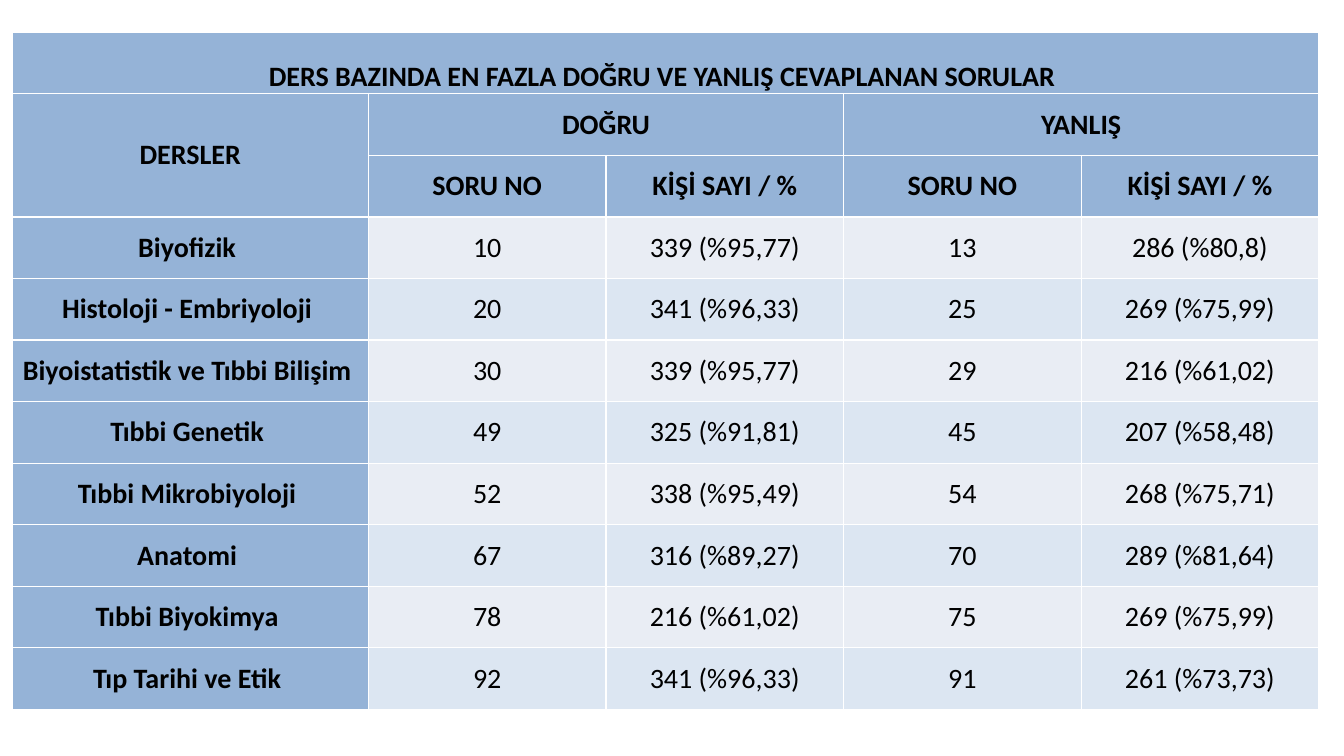
from lxml.etree import SubElement
from pptx import Presentation
from pptx.dml.color import RGBColor
from pptx.enum.text import MSO_ANCHOR, PP_ALIGN
from pptx.oxml.ns import qn
from pptx.util import Inches, Pt

HEADER_FILL = "95B3D7"
BAND_FILLS = ("E9EDF4", "DCE6F2")
HEADER_ROWS = 3
COLUMN_SHARES = (1.5, 1, 1, 1, 1)

ROWS = [
    ("DERS BAZINDA EN FAZLA DOĞRU VE YANLIŞ CEVAPLANAN SORULAR ", "", "", "", ""),
    ("DERSLER", "DOĞRU", "", "YANLIŞ", ""),
    ("", "SORU NO", "KİŞİ SAYI / %", "SORU NO", "KİŞİ SAYI / %"),
    ("Biyofizik ", "10", "339 (%95,77)", "13", "286 (%80,8)"),
    ("Histoloji - Embriyoloji ", "20", "341 (%96,33)", "25", "269 (%75,99)"),
    ("Biyoistatistik ve Tıbbi Bilişim ", "30", "339 (%95,77)", "29", "216 (%61,02)"),
    ("Tıbbi Genetik ", "49", "325 (%91,81)", "45", "207 (%58,48)"),
    ("Tıbbi Mikrobiyoloji ", "52", "338 (%95,49)", "54", "268 (%75,71)"),
    ("Anatomi ", "67", "316 (%89,27)", "70", "289 (%81,64)"),
    ("Tıbbi Biyokimya ", "78", "216 (%61,02)", "75", "269 (%75,99)"),
    ("Tıp Tarihi ve Etik ", "92", "341 (%96,33)", "91", "261 (%73,73)"),
]
# First and last cell of each merged block, as (row, column)
MERGES = [((0, 0), (0, 4)), ((1, 0), (2, 0)), ((1, 1), (1, 2)), ((1, 3), (1, 4))]


def color(hex_string):
    return RGBColor.from_string(hex_string)


class SlideBuilder:
    font = "Calibri"
    text_size = Pt(20)
    text_color = "000000"
    border_color = "FFFFFF"
    border_width = Pt(1)

    def __init__(self, presentation):
        self.slide = presentation.slides.add_slide(presentation.slide_layouts[6])

    def add_table(self, rows, left, top, width, height, shares):
        """Add an unstyled table whose columns split the width by shares."""
        frame = self.slide.shapes.add_table(
            len(rows), len(shares), Inches(left), Inches(top), Inches(width), Inches(height))
        table = frame.table
        table.first_row = table.horz_banding = False
        for column, share in zip(table.columns, shares):
            column.width = Inches(width * share / sum(shares))
        for row in table.rows:
            row.height = Inches(height / len(rows))
        return table

    def add_borders(self, cell):
        properties = cell._tc.get_or_add_tcPr()
        for side in ("a:lnL", "a:lnR", "a:lnT", "a:lnB"):
            line = SubElement(properties, qn(side), w=str(self.border_width))
            fill = SubElement(line, qn("a:solidFill"))
            SubElement(fill, qn("a:srgbClr"), val=self.border_color)

    def fill_cell(self, cell, text, fill, bold, anchor):
        self.add_borders(cell)
        cell.fill.solid()
        cell.fill.fore_color.rgb = color(fill)
        cell.margin_left = cell.margin_right = cell.margin_top = cell.margin_bottom = 0
        cell.vertical_anchor = anchor
        if not text:
            return
        paragraph = cell.text_frame.paragraphs[0]
        paragraph.alignment = PP_ALIGN.CENTER
        run = paragraph.add_run()
        run.text = text
        run.font.name = self.font
        run.font.size = self.text_size
        run.font.bold = bold
        run.font.color.rgb = color(self.text_color)


def main():
    presentation = Presentation()
    presentation.slide_width, presentation.slide_height = Inches(13.33), Inches(7.5)
    builder = SlideBuilder(presentation)
    table = builder.add_table(ROWS, 0.12, 0.32, 12.96, 6.72, COLUMN_SHARES)

    for row_index, row in enumerate(ROWS):
        anchor = MSO_ANCHOR.MIDDLE if row_index else MSO_ANCHOR.BOTTOM
        band_fill = BAND_FILLS[(row_index - HEADER_ROWS) % 2]
        for column_index, text in enumerate(row):
            is_header = row_index < HEADER_ROWS or column_index == 0
            fill = HEADER_FILL if is_header else band_fill
            builder.fill_cell(table.cell(row_index, column_index), text, fill, is_header, anchor)
    for first, last in MERGES:
        table.cell(*first).merge(table.cell(*last))

    presentation.save("out.pptx")


if __name__ == "__main__":
    main()
